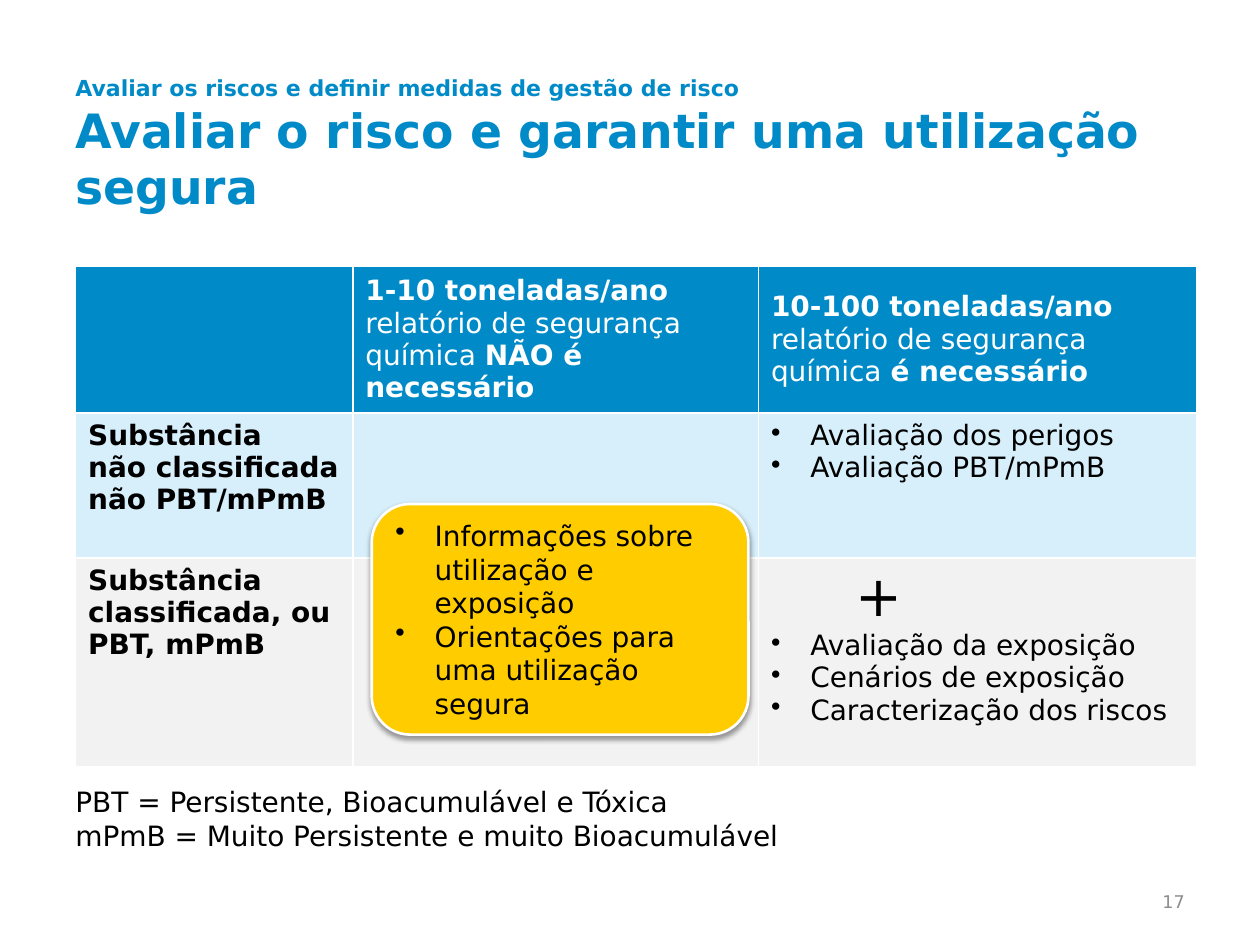
import pptx
import pptx.chart.data
import pptx.dml.color
import pptx.enum.shapes
import pptx.enum.text
import pptx.oxml
import pptx.util

Pt = pptx.util.Pt
Align = pptx.enum.text.PP_ALIGN
Anchor = pptx.enum.text.MSO_ANCHOR
Shape = pptx.enum.shapes.MSO_SHAPE
HUES = {"blue": "008BC8", "sky": "D7EFFA", "pale": "F2F2F2", "gold": "FFCC00",
        "white": "FFFFFF", "black": "000000", "gray": "8C8C8C"}
SPACE = "http://schemas.openxmlformats.org/drawingml/2006/main"


def hue(name):
    """Return the named colour."""
    return pptx.dml.color.RGBColor.from_string(HUES[name])


def write(line, text, size=16, color="black", bold=False, font="DejaVu Sans"):
    """Add a run of text to a paragraph."""
    run = line.add_run()
    run.text = text
    run.font.name = font
    run.font.size = Pt(size)
    run.font.bold = bold
    run.font.color.rgb = hue(color)


def fill(frame, lines, bullet=False, indent=0, align=Align.LEFT, **style):
    """Write lines, each a string or a list of text and style pairs."""
    for line in lines:
        last = frame.paragraphs[-1]
        par = frame.add_paragraph() if last.runs else last
        par.alignment = align
        props = par._p.get_or_add_pPr()
        if bullet:
            props.set("marL", str(Pt(22.5)))
            props.set("indent", str(-Pt(22.5)))
            mark = pptx.oxml.parse_xml(f'<a:buChar xmlns:a="{SPACE}" char="•"/>')
            props.append(mark)
        elif indent:
            props.set("marL", str(Pt(indent)))
        for text, extra in [(line, {})] if isinstance(line, str) else line:
            write(par, text, **{**style, **extra})


class Page:
    """Hold the style and the current slide."""

    def __init__(self, deck):
        self.slide = deck.slides.add_slide(deck.slide_layouts[6])
        self.shapes = self.slide.shapes

    def text(self, box, lines, anchor=Anchor.TOP, **style):
        """Add a wrapped text box."""
        frame = self.shapes.add_textbox(*map(Pt, box)).text_frame
        frame.word_wrap = True
        frame.vertical_anchor = anchor
        fill(frame, lines, **style)

    def table(self, box, widths, heights, fills):
        """Add a table with one fill per row and return it."""
        grid = self.shapes.add_table(len(heights), len(widths), *map(Pt, box)).table
        for col, width in zip(grid.columns, widths):
            col.width = Pt(width)
        for row, height, color in zip(grid.rows, heights, fills):
            row.height = Pt(height)
            for cell in row.cells:
                cell.fill.solid()
                cell.fill.fore_color.rgb = hue(color)
        return grid

    def card(self, box, lines, color, **style):
        """Add a rounded card with a soft shadow."""
        card = self.shapes.add_shape(Shape.ROUNDED_RECTANGLE, *map(Pt, box))
        card.fill.solid()
        card.fill.fore_color.rgb = hue(color)
        card.line.color.rgb = hue("white")
        card.line.width = Pt(1.5)
        card.shadow.inherit = False
        glow = pptx.oxml.parse_xml(
            f'<a:outerShdw xmlns:a="{SPACE}" blurRad="{Pt(3.1)}" dist="{Pt(1.6)}" '
            f'dir="5400000" rotWithShape="0"><a:srgbClr val="{HUES["black"]}">'
            '<a:alpha val="38000"/></a:srgbClr></a:outerShdw>')
        card._element.spPr.find(f"{{{SPACE}}}effectLst").append(glow)
        card.text_frame.word_wrap = True
        card.text_frame.vertical_anchor = Anchor.MIDDLE
        fill(card.text_frame, lines, **style)


def main():
    """Build the slide."""
    deck = pptx.Presentation()
    deck.slide_width, deck.slide_height = Pt(720), Pt(540)
    page = Page(deck)
    bold = {"bold": True}
    page.text((516, 500.5, 168, 28.8), ["17"], Anchor.MIDDLE,
              align=Align.RIGHT, size=10, color="gray")
    page.text((36, 37.5, 648, 90), [
        [("Avaliar os riscos e definir medidas de gestão de risco", {"size": 12.6})],
        "Avaliar o risco e garantir uma utilização segura",
    ], Anchor.MIDDLE, size=27, color="blue", bold=True)

    grid = page.table((43.2, 152, 640.8, 284), (158.4, 231.8, 250.6),
                      (82, 82.8, 119.2), ("blue", "sky", "pale"))
    heads = [
        ["", []],
        [[("1-10 toneladas/ano", bold)],
         [("relatório de segurança química ", {}), ("NÃO é necessário", bold)]],
        [[("10-100 toneladas/ano", bold), (" relatório de segurança química ", {}),
          ("é necessário", bold)]],
    ]
    for col in (1, 2):
        cell = grid.cell(0, col)
        cell.vertical_anchor = Anchor.MIDDLE
        fill(cell.text_frame, heads[col], color="white")
    fill(grid.cell(1, 0).text_frame,
         ["Substância", "não classificada", "não PBT/mPmB"], bold=True)
    fill(grid.cell(2, 0).text_frame,
         ["Substância classificada, ou PBT, mPmB"], bold=True)
    fill(grid.cell(1, 2).text_frame,
         ["Avaliação dos perigos", "Avaliação PBT/mPmB"], bullet=True)
    tasks = grid.cell(2, 2).text_frame
    fill(tasks, ["+"], indent=48, size=32)
    fill(tasks, ["Avaliação da exposição", "Cenários de exposição",
                 "Caracterização dos riscos"], bullet=True)

    page.text((36, 445, 531.4, 46), [
        "PBT = Persistente, Bioacumulável e Tóxica",
        "mPmB = Muito Persistente e muito Bioacumulável"])
    page.card((212.4, 288, 215.3, 131.8), [
        "Informações sobre utilização e exposição",
        "Orientações para uma utilização segura"], "gold", bullet=True)
    deck.save("out.pptx")


if __name__ == "__main__":
    main()
